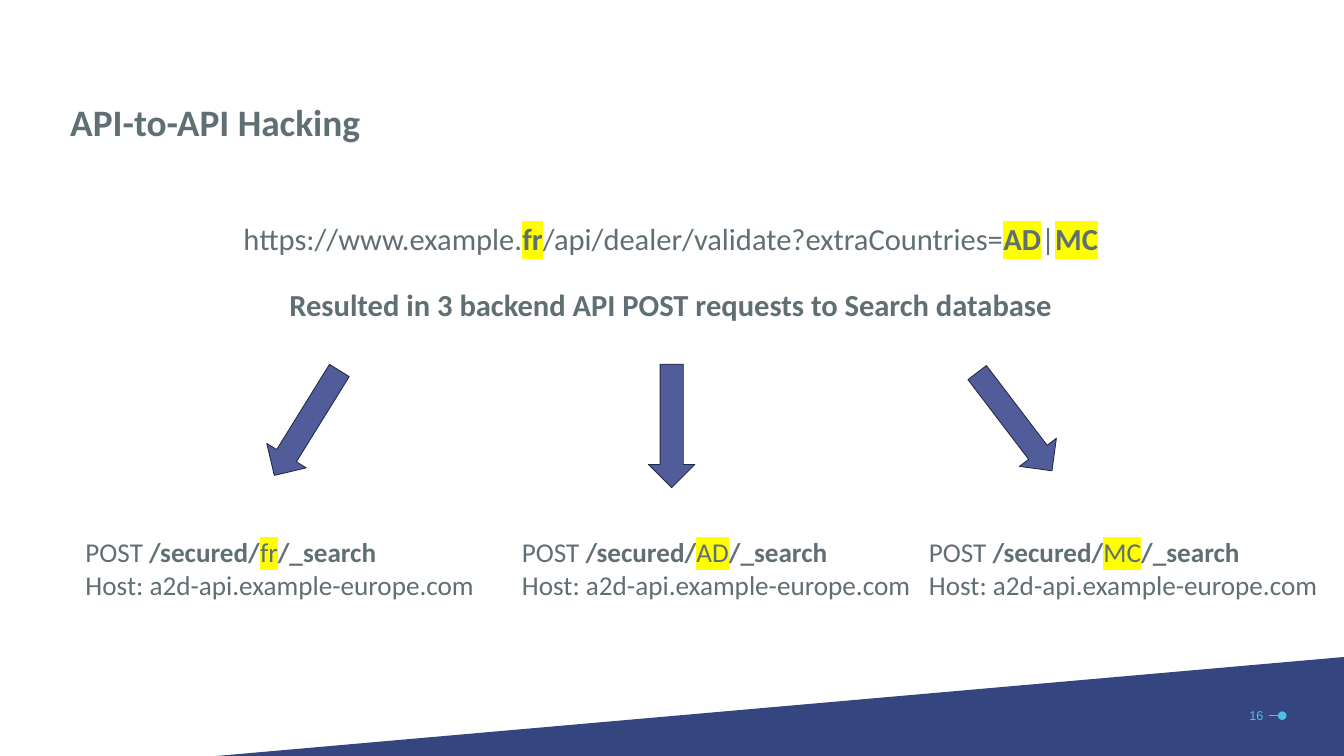
from lxml import etree
from pptx import Presentation
from pptx import util as u
from pptx.dml.color import RGBColor
from pptx.enum import shapes, text
from pptx.oxml.ns import qn

PX = 9144
INK, CYAN, NAVY, MARK = "606F74", "4DC0E3", "35457F", "FFFF00"
ARROW_FILL, ARROW_LINE = "515C9A", "242843"
LEFT, CENTER, RIGHT = text.PP_ALIGN.LEFT, text.PP_ALIGN.CENTER, text.PP_ALIGN.RIGHT


def rgb(value):
    return RGBColor.from_string(value)


class Deck:
    """Holds the text style and the current slide, and draws its elements."""

    def __init__(self, width, height, font, color):
        self.prs = Presentation()
        self.prs.slide_width, self.prs.slide_height = width * PX, height * PX
        self.font, self.color = font, color
        self.s = self.prs.slides.add_slide(self.prs.slide_layouts[6])

    def paint(self, sp, fill, line=None):
        sp.shadow.inherit = False
        sp.fill.solid()
        sp.fill.fore_color.rgb = rgb(fill)
        if line:
            sp.line.color.rgb = rgb(line)
            sp.line.width = u.Pt(1)
        else:
            sp.line.fill.background()

    def polygon(self, points, fill):
        builder = self.s.shapes.build_freeform(*points[0], scale=PX)
        builder.add_line_segments(points[1:], close=True)
        self.paint(builder.convert_to_shape(), fill)

    def shape(self, kind, box, fill, line=None, rotation=0):
        sp = self.s.shapes.add_shape(kind, *(n * PX for n in box))
        sp.rotation = rotation
        self.paint(sp, fill, line)

    def line(self, x1, y1, x2, y2, color):
        ends = (n * PX for n in (x1, y1, x2, y2))
        sp = self.s.shapes.add_connector(shapes.MSO_CONNECTOR.STRAIGHT, *ends)
        sp.line.color.rgb = rgb(color)
        sp.line.width = u.Pt(1)
        etree.SubElement(sp._element.spPr, qn("a:effectLst"))

    def highlight(self, r):
        mark = etree.Element(qn("a:highlight"))
        etree.SubElement(mark, qn("a:srgbClr"), val=MARK)
        r._r.rPr.find(qn("a:latin")).addprevious(mark)

    def text(self, box, paragraphs, size, align=LEFT, gap=0, font=None, color=None):
        tf = self.s.shapes.add_textbox(*(n * PX for n in box)).text_frame
        tf.word_wrap = True
        for i, runs in enumerate(paragraphs):
            p = tf.add_paragraph() if i else tf.paragraphs[0]
            p.alignment = align
            if i and gap:
                p.space_before = u.Pt(gap)
            for words, bold, marked in runs:
                r = p.add_run()
                r.text = words
                r.font.size, r.font.bold = u.Pt(size), bold
                r.font.color.rgb = rgb(color or self.color)
                r.font.name = font or self.font
                if marked:
                    self.highlight(r)


def main():
    deck = Deck(2199, 1237, "Calibri", INK)
    deck.polygon([(354, 1237), (2199, 1075), (2199, 1237)], NAVY)
    deck.shape(shapes.MSO_SHAPE.OVAL, (2091, 1164, 14, 14), CYAN)
    deck.line(2099, 1171, 2077, 1171, CYAN)
    deck.text((1999, 1153, 78, 35), [[("16", False, False)]], 15, RIGHT,
              font="Arial", color=CYAN)

    deck.text((105, 158, 1985, 85), [[("API-to-API Hacking", True, False)]], 44)
    url = [
        ("https://www.example.", False, False),
        ("fr", True, True),
        ("/api/dealer/validate?extraCountries=", False, False),
        ("AD", True, True),
        ("|", False, False),
        ("MC", True, True),
    ]
    result = [("Resulted in 3 backend API POST requests to Search database", True, False)]
    deck.text((105, 355, 1985, 180), [url, result], 36, CENTER, gap=34)

    for x, country in ((130, "fr"), (844, "AD"), (1510, "MC")):
        request = [
            ("POST ", False, False),
            ("/secured/", True, False),
            (country, False, True),
            ("/_search", True, False),
        ]
        host = [("Host: a2d-api.example-europe.com", False, False)]
        deck.text((x, 871, 689, 118), [request, host], 32)

    for x, y, angle in ((401, 654, 121.8), (1559, 652, 52.7), (998, 659, 90)):
        deck.shape(shapes.MSO_SHAPE.RIGHT_ARROW, (x, y, 202, 76),
                   ARROW_FILL, ARROW_LINE, angle)
    deck.prs.save("out.pptx")


if __name__ == "__main__":
    main()
